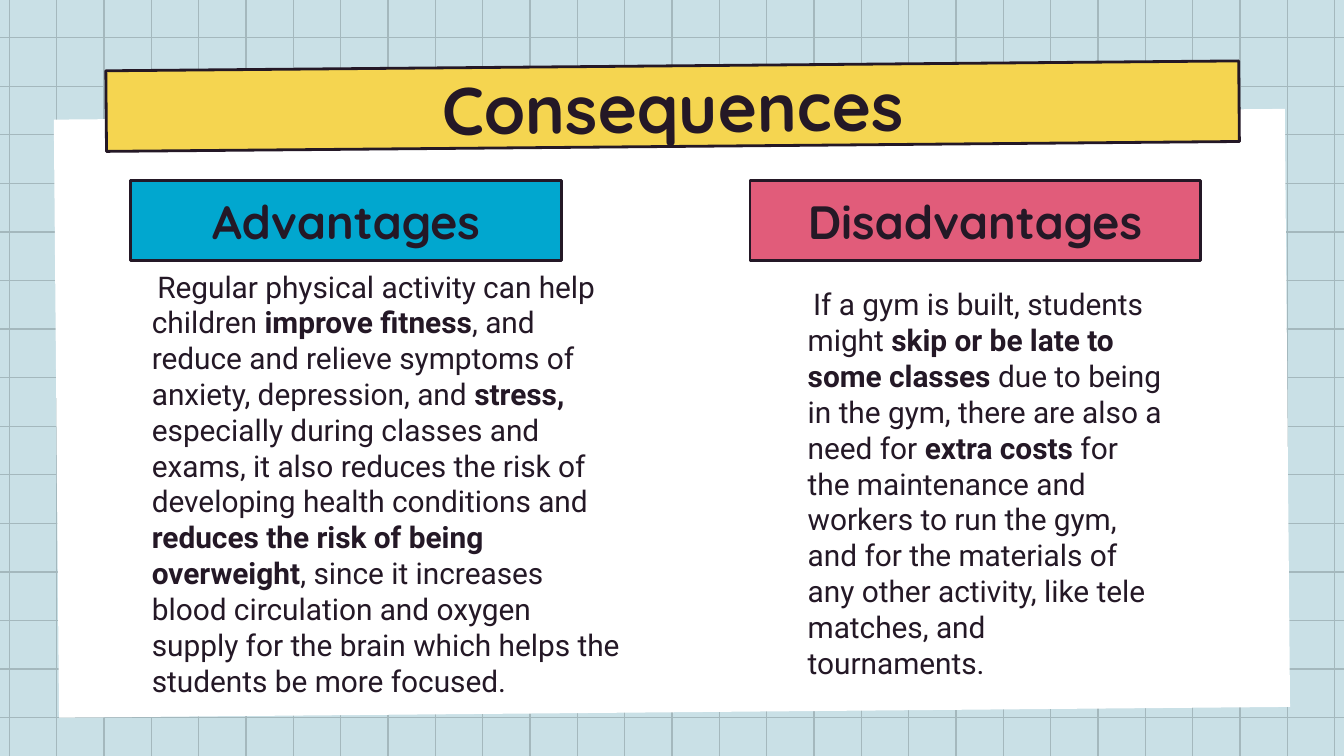
from lxml.etree import SubElement
from pptx import Presentation
from pptx.dml.color import RGBColor
from pptx.enum.shapes import MSO_CONNECTOR, MSO_SHAPE
from pptx.enum.text import MSO_ANCHOR, MSO_AUTO_SIZE, PP_ALIGN
from pptx.oxml.ns import qn
from pptx.util import Inches, Pt

COLORS = {"background": "C9E0E6", "grid": "A4B8BD", "sheet": "FFFFFF", "ink": "241826",
          "yellow": "F5D550", "blue": "01A7CF", "pink": "E15C7A"}
TILT = -0.5
TITLE_FONT = {"name": "Quicksand", "size": Pt(36), "bold": True}
HEADING_FONT = {"name": "Quicksand", "size": Pt(25), "bold": True}
BODY_FONT = {"name": "Roboto", "size": Pt(16)}

# Each run is (text, bold)
ADVANTAGES = [
    ("Regular physical activity can help children ", False),
    ("improve fitness", True),
    (", and reduce and relieve symptoms of anxiety, depression, and ", False),
    ("stress,", True),
    (" especially during classes and exams, it also reduces the risk of "
     "developing health conditions and ", False),
    ("reduces the risk of being overweight", True),
    (", since it increases blood circulation and oxygen supply for the brain "
     "which helps the students be more focused.", False),
]
DISADVANTAGES = [
    ("If a gym is built, students might ", False),
    ("skip or be late to some classes", True),
    (" due to being in the gym, there are also a need for ", False),
    ("extra costs", True),
    (" for the maintenance and workers to run the gym, and for the materials of "
     "any other activity, like tele matches, and tournaments.", False),
]


def rgb(name):
    return RGBColor.from_string(COLORS[name])


def style_font(font, values):
    for key, value in values.items():
        setattr(font, key, value)
    font.color.rgb = rgb("ink")


def add_grid_line(s, x1, y1, x2, y2):
    line = s.shapes.add_connector(MSO_CONNECTOR.STRAIGHT, *map(Inches, (x1, y1, x2, y2)))
    line.line.color.rgb = rgb("grid")
    line.line.width = Pt(0.75)
    SubElement(line._element.spPr, qn("a:effectLst"))


def add_grid(s):
    for i in range(29):
        x = 0.07 + i * 9.86 / 28
        add_grid_line(s, x, -0.05, x, 5.7)
    for i in range(15):
        y = 0.28 + i * 5.06 / 14
        add_grid_line(s, -0.16, y, 10.15, y)


def add_sheet(s):
    sheet = s.shapes.add_shape(MSO_SHAPE.RECTANGLE, *map(Inches, (0.42, 0.85, 9.16, 4.45)))
    sheet.rotation = TILT
    sheet.shadow.inherit = False
    sheet.fill.solid()
    sheet.fill.fore_color.rgb = rgb("sheet")
    sheet.line.fill.background()


def place(s, idx, box, inset, anchor):
    """Move a placeholder to its box, in front of what is drawn so far."""
    sp = s.placeholders[idx]
    sp.left, sp.top, sp.width, sp.height = map(Inches, box)
    s.shapes._spTree.append(sp._element)
    tf = sp.text_frame
    tf.word_wrap = True
    tf.auto_size = MSO_AUTO_SIZE.NONE
    tf.vertical_anchor = anchor
    for side in ("left", "right", "top", "bottom"):
        setattr(tf, f"margin_{side}", Inches(inset))
    p = tf.paragraphs[0]
    p.space_before = Pt(0)
    return sp, p


def fill_banner(s, idx, text, box, color, font, inset=0.1, anchor=MSO_ANCHOR.MIDDLE):
    sp, p = place(s, idx, box, inset, anchor)
    sp.fill.solid()
    sp.fill.fore_color.rgb = rgb(color)
    sp.line.color.rgb = rgb("ink")
    sp.line.width = Pt(1.5)
    p.alignment = PP_ALIGN.CENTER
    r = p.add_run()
    r.text = text
    style_font(r.font, font)
    return sp


def fill_body(s, idx, runs, box):
    _, p = place(s, idx, box, 0.1, MSO_ANCHOR.MIDDLE)
    p.alignment = PP_ALIGN.LEFT
    pPr = p._p.get_or_add_pPr()
    pPr.set("marL", str(Inches(0.5)))
    pPr.set("indent", str(Inches(0.04)))
    SubElement(pPr, qn("a:buNone"))
    for text, bold in runs:
        r = p.add_run()
        r.text = text
        style_font(r.font, {**BODY_FONT, "bold": bold})


def main():
    # 16:9 page
    prs = Presentation()
    prs.slide_width = Inches(10)
    prs.slide_height = Inches(10 * 9 / 16)
    s = prs.slides.add_slide(prs.slide_layouts.get_by_name("Comparison"))

    # Squared paper and white sheet
    s.background.fill.solid()
    s.background.fill.fore_color.rgb = rgb("background")
    add_grid(s)
    add_sheet(s)

    # Two columns
    fill_banner(s, 3, "Disadvantages", (5.58, 1.34, 3.35, 0.6), "pink", HEADING_FONT)
    fill_body(s, 2, ADVANTAGES, (0.53, 2.46, 4.19, 2.27))
    fill_banner(s, 1, "Advantages", (0.97, 1.34, 3.21, 0.6), "blue", HEADING_FONT)
    fill_body(s, 4, DISADVANTAGES, (5.41, 2.46, 3.35, 2.27))

    # Tilted title
    title = fill_banner(s, 0, "Consequences", (0.79, 0.49, 8.43, 0.6), "yellow",
                        TITLE_FONT, inset=0, anchor=MSO_ANCHOR.TOP)
    title.rotation = TILT

    prs.save("out.pptx")


if __name__ == "__main__":
    main()
